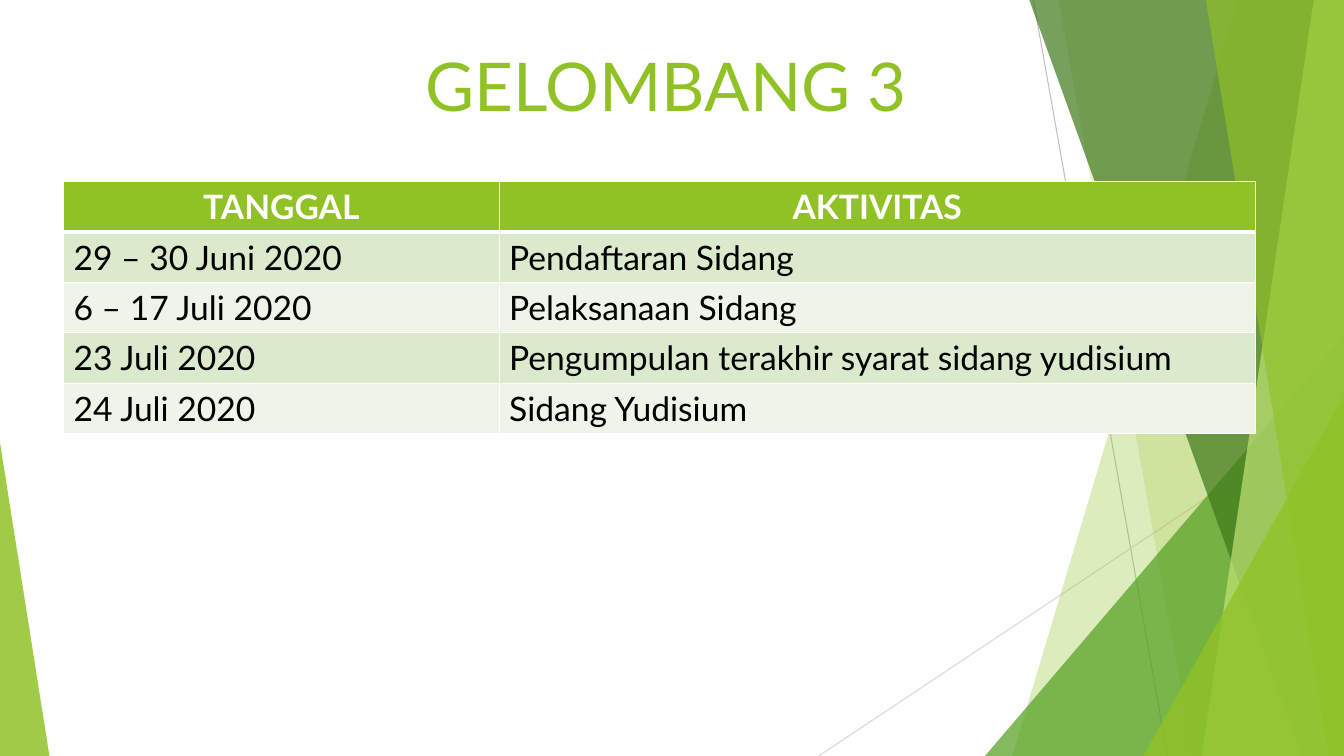
import lxml.etree
import pptx
import pptx.dml.color
import pptx.enum.shapes
import pptx.enum.text
import pptx.oxml
import pptx.oxml.ns
import pptx.util

WIDTH = pptx.util.Inches(13.33)
HEIGHT = pptx.util.Inches(7.5)
FONT = "Lato"
COLOURS = {
    "lime": "90C226", "green": "54A021", "forest": "3F7819", "pale": "C0E474",
    "silver": "BFBFBF", "mist": "D9D9D9", "odd": "DBE9CD", "even": "EEF4E8",
    "white": "FFFFFF", "black": "000000",
}
SCHEDULE = [
    ("TANGGAL", "AKTIVITAS"),
    ("29 – 30 Juni 2020", "Pendaftaran Sidang"),
    ("6 – 17 Juli 2020", "Pelaksanaan Sidang"),
    ("23 Juli 2020", "Pengumpulan terakhir syarat sidang yudisium"),
    ("24 Juli 2020", "Sidang Yudisium"),
]
COLUMN_SHARES = (32.41, 56.26)
ROW_SHARE = 6.67


def across(share):
    """Return a percentage of the slide width."""
    return pptx.util.Emu(round(WIDTH * share / 100))


def down(share):
    """Return a percentage of the slide height."""
    return pptx.util.Emu(round(HEIGHT * share / 100))


def rgb(name):
    """Look up a named colour."""
    return pptx.dml.color.RGBColor.from_string(COLOURS[name])


def paint(shape, colour, opacity):
    """Fill a shape with a translucent colour and no outline."""
    shape.shadow.inherit = False
    shape.line.fill.background()
    shape.fill.solid()
    shape.fill.fore_color.rgb = rgb(colour)
    tint = shape.fill._xPr.find(".//" + pptx.oxml.ns.qn("a:srgbClr"))
    alpha = lxml.etree.SubElement(tint, pptx.oxml.ns.qn("a:alpha"))
    alpha.set("val", str(opacity * 1000))


def add_ray(page, start, end, colour):
    """Draw a thin decorative line."""
    ray = page.shapes.add_connector(
        pptx.enum.shapes.MSO_CONNECTOR.STRAIGHT,
        across(start[0]), down(start[1]), across(end[0]), down(end[1]))
    ray.line.color.rgb = rgb(colour)
    ray.line.width = pptx.util.Pt(0.75)
    lxml.etree.SubElement(ray._element.spPr, pptx.oxml.ns.qn("a:effectLst"))


def add_band(page, top, bottom, colour, opacity):
    """Draw a full-height band from a slanted edge to the right margin."""
    builder = page.shapes.build_freeform(across(top), 0)
    builder.add_line_segments(
        [(WIDTH, 0), (WIDTH, HEIGHT), (across(bottom), HEIGHT)], close=True)
    paint(builder.convert_to_shape(), colour, opacity)


def add_corner(page, left, right, top, apex, colour, opacity):
    """Draw a right-angled triangle standing on the bottom margin."""
    corner = page.shapes.add_shape(
        pptx.enum.shapes.MSO_SHAPE.ISOSCELES_TRIANGLE,
        across(left), down(top), across(right - left), down(100 - top))
    corner.adjustments[0] = apex
    paint(corner, colour, opacity)


def format_text(para, size, colour, alignment, bold=False):
    """Align a paragraph and format its runs."""
    para.alignment = alignment
    for span in para.runs:
        span.font.name = FONT
        span.font.size = pptx.util.Pt(size)
        span.font.bold = bold
        span.font.color.rgb = rgb(colour)


def set_title(page, text):
    """Place and format the title placeholder."""
    title = page.shapes.title
    title.left, title.top = across(30.91), down(5.2)
    title.width, title.height = across(41.56), down(8.93)
    frame = title.text_frame
    frame.text = text
    frame.word_wrap = True
    frame.auto_size = pptx.enum.text.MSO_AUTO_SIZE.NONE
    frame.vertical_anchor = pptx.enum.text.MSO_ANCHOR.TOP
    format_text(frame.paragraphs[0], 48, "lime", pptx.enum.text.PP_ALIGN.LEFT)


def set_borders(cell, top, bottom):
    """Give a cell white borders with the given top and bottom widths."""
    properties = cell._tc.get_or_add_tcPr()
    for side, points in (("L", 1), ("R", 1), ("T", top), ("B", bottom)):
        properties.append(pptx.oxml.parse_xml(
            f'<a:ln{side} {pptx.oxml.ns.nsdecls("a")} w="{pptx.util.Pt(points)}">'
            f'<a:solidFill><a:srgbClr val="{COLOURS["white"]}"/></a:solidFill>'
            f'</a:ln{side}>'))


def add_schedule(page):
    """Add the table of dates and activities."""
    table = page.shapes.add_table(
        len(SCHEDULE), len(COLUMN_SHARES), across(4.73), down(24),
        across(sum(COLUMN_SHARES)), down(ROW_SHARE * len(SCHEDULE))).table
    for column, share in zip(table.columns, COLUMN_SHARES):
        column.width = across(share)
    for number, texts in enumerate(SCHEDULE):
        header = number == 0
        table.rows[number].height = down(ROW_SHARE)
        for cell, text in zip(table.rows[number].cells, texts):
            set_borders(cell, 3 if number == 1 else 1, 3 if header else 1)
            cell.fill.solid()
            cell.fill.fore_color.rgb = rgb(
                "lime" if header else "odd" if number % 2 else "even")
            cell.text_frame.text = text
            align = pptx.enum.text.PP_ALIGN
            format_text(cell.text_frame.paragraphs[0], 24,
                        "white" if header else "black",
                        align.CENTER if header else align.LEFT, header)


def add_decoration(page):
    """Draw the overlapping green facets from back to front."""
    add_ray(page, (76.89, 0), (86.87, 100), "silver")
    add_ray(page, (100, 53.73), (60.92, 100), "mist")
    add_band(page, 92.12, 75.32, "lime", 30)
    add_band(page, 78.77, 88.75, "lime", 20)
    add_corner(page, 73.29, 100, 44.4, 1, "green", 72)
    add_band(page, 76.59, 96.85, "forest", 70)
    add_band(page, 97.75, 89.42, "pale", 70)
    add_band(page, 89.72, 98.87, "lime", 65)
    add_corner(page, 85.07, 100, 52.4, 1, "lime", 80)
    add_corner(page, 0, 3.68, 58.53, 0, "lime", 85)


def main():
    """Build and save the slide."""
    deck = pptx.Presentation()
    deck.slide_width, deck.slide_height = WIDTH, HEIGHT
    page = deck.slides.add_slide(deck.slide_layouts.get_by_name("Title Only"))
    add_decoration(page)
    set_title(page, "GELOMBANG 3")
    add_schedule(page)
    deck.save("out.pptx")


if __name__ == "__main__":
    main()
